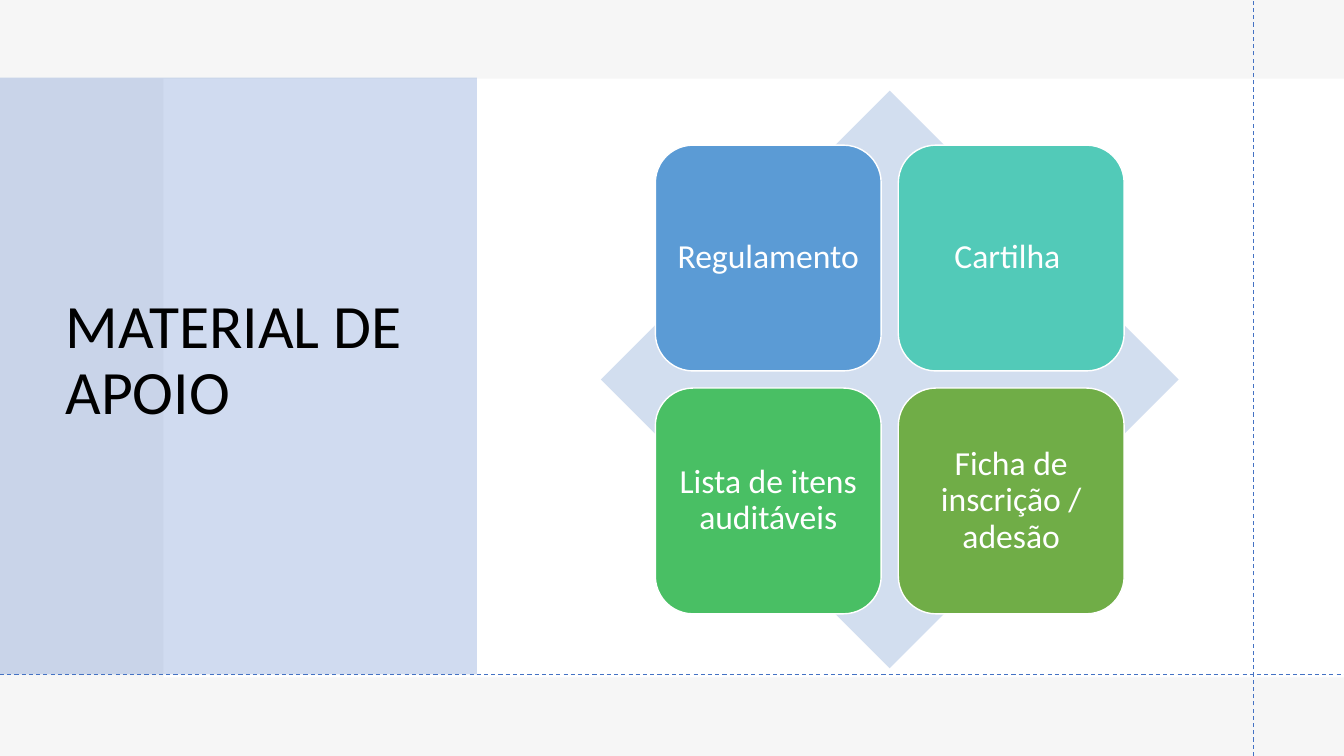
from lxml import etree
from pptx import Presentation
from pptx.dml.color import RGBColor
from pptx.enum.dml import MSO_LINE
from pptx.enum.shapes import MSO_CONNECTOR, MSO_SHAPE
from pptx.enum.text import MSO_ANCHOR, PP_ALIGN
from pptx.oxml.ns import qn
from pptx.util import Inches, Pt

WHITE = RGBColor(0xFF, 0xFF, 0xFF)
BLACK = RGBColor(0x00, 0x00, 0x00)
GRAY = RGBColor(0xE7, 0xE6, 0xE6)
PALE_GRAY = RGBColor(0xF7, 0xF6, 0xF6)
BLUE = RGBColor(0x44, 0x72, 0xC4)
PALE_BLUE = RGBColor(0xD2, 0xDE, 0xEF)
FONT = "Calibri"
WIDTH, HEIGHT = 13.33, 7.5

# Content
TITLE = "MATERIAL DE APOIO"
CARDS = [
    ("Regulamento", RGBColor(0x5B, 0x9B, 0xD5)),
    ("Cartilha ", RGBColor(0x52, 0xCA, 0xB8)),
    ("Lista de itens auditáveis", RGBColor(0x49, 0xBF, 0x64)),
    ("Ficha de inscrição / adesão", RGBColor(0x70, 0xAD, 0x47)),
]

# Layout: left, top, width, height, colour, opacity in percent
PANELS = [
    (0, 0, WIDTH, HEIGHT, WHITE, 100),
    (0, 0, WIDTH, HEIGHT, GRAY, 35),
    (1.62, 0.78, 11.71, 5.94, WHITE, 100),
    (0, 0.77, 4.73, 5.92, BLUE, 25),
]
GUIDES = [(12.43, HEIGHT, 12.43, 0), (0, 6.69, WIDTH, 6.69)]
DIAMOND = (5.96, 0.9, 5.73, 5.73)
CARD_LEFT, CARD_TOP, CARD_SIZE, CARD_STEP = 6.5, 1.44, 2.24, 2.41


def add_filled(slide, kind, left, top, width, height, color, opacity=100):
    shape = slide.shapes.add_shape(
        kind, Inches(left), Inches(top), Inches(width), Inches(height))
    shape.shadow.inherit = False
    shape.fill.solid()
    shape.fill.fore_color.rgb = color
    shape.line.fill.background()
    if opacity < 100:
        color_element = shape.fill._xPr.find(qn("a:solidFill"))[0]
        alpha = etree.SubElement(color_element, qn("a:alpha"))
        alpha.set("val", str(opacity * 1000))
    return shape


def write_text(shape, text, size, color, alignment):
    frame = shape.text_frame
    frame.word_wrap = True
    frame.vertical_anchor = MSO_ANCHOR.MIDDLE
    paragraph = frame.paragraphs[0]
    paragraph.alignment = alignment
    paragraph.line_spacing = 0.9
    run = paragraph.add_run()
    run.text = text
    run.font.name = FONT
    run.font.size = Pt(size)
    run.font.color.rgb = color
    return frame


def add_guide(slide, x1, y1, x2, y2):
    guide = slide.shapes.add_connector(
        MSO_CONNECTOR.STRAIGHT, Inches(x1), Inches(y1), Inches(x2), Inches(y2))
    guide.line.color.rgb = BLUE
    guide.line.width = Pt(0.75)
    guide.line.dash_style = MSO_LINE.DASH
    etree.SubElement(guide._element.spPr, qn("a:effectLst"))


def add_card(slide, index, text, color):
    row, column = divmod(index, 2)
    card = add_filled(
        slide, MSO_SHAPE.ROUNDED_RECTANGLE,
        CARD_LEFT + column * CARD_STEP, CARD_TOP + row * CARD_STEP,
        CARD_SIZE, CARD_SIZE, color)
    card.line.color.rgb = WHITE
    card.line.width = Pt(1)
    frame = write_text(card, text, 24, WHITE, PP_ALIGN.CENTER)
    frame.margin_left = frame.margin_right = Inches(0.1)
    frame.margin_top = frame.margin_bottom = Inches(0.1)


def main():
    presentation = Presentation()
    presentation.slide_width = Inches(WIDTH)
    presentation.slide_height = Inches(HEIGHT)
    slide = presentation.slides.add_slide(presentation.slide_layouts[5])
    slide.background.fill.solid()
    slide.background.fill.fore_color.rgb = PALE_GRAY

    # Background panels
    for left, top, width, height, color, opacity in PANELS:
        add_filled(slide, MSO_SHAPE.RECTANGLE,
                   left, top, width, height, color, opacity)

    # Title, raised above the panels
    title = slide.shapes.title
    title.left, title.top = Inches(0.55), Inches(0.74)
    title.width, title.height = Inches(3.95), Inches(5.69)
    write_text(title, TITLE, 44, BLACK, PP_ALIGN.LEFT)
    slide.shapes._spTree.append(title._element)

    # Dashed guide lines
    for ends in GUIDES:
        add_guide(slide, *ends)

    # Diamond with the four cards
    add_filled(slide, MSO_SHAPE.DIAMOND, *DIAMOND, PALE_BLUE)
    for index, (text, color) in enumerate(CARDS):
        add_card(slide, index, text, color)

    presentation.save("out.pptx")


if __name__ == "__main__":
    main()
